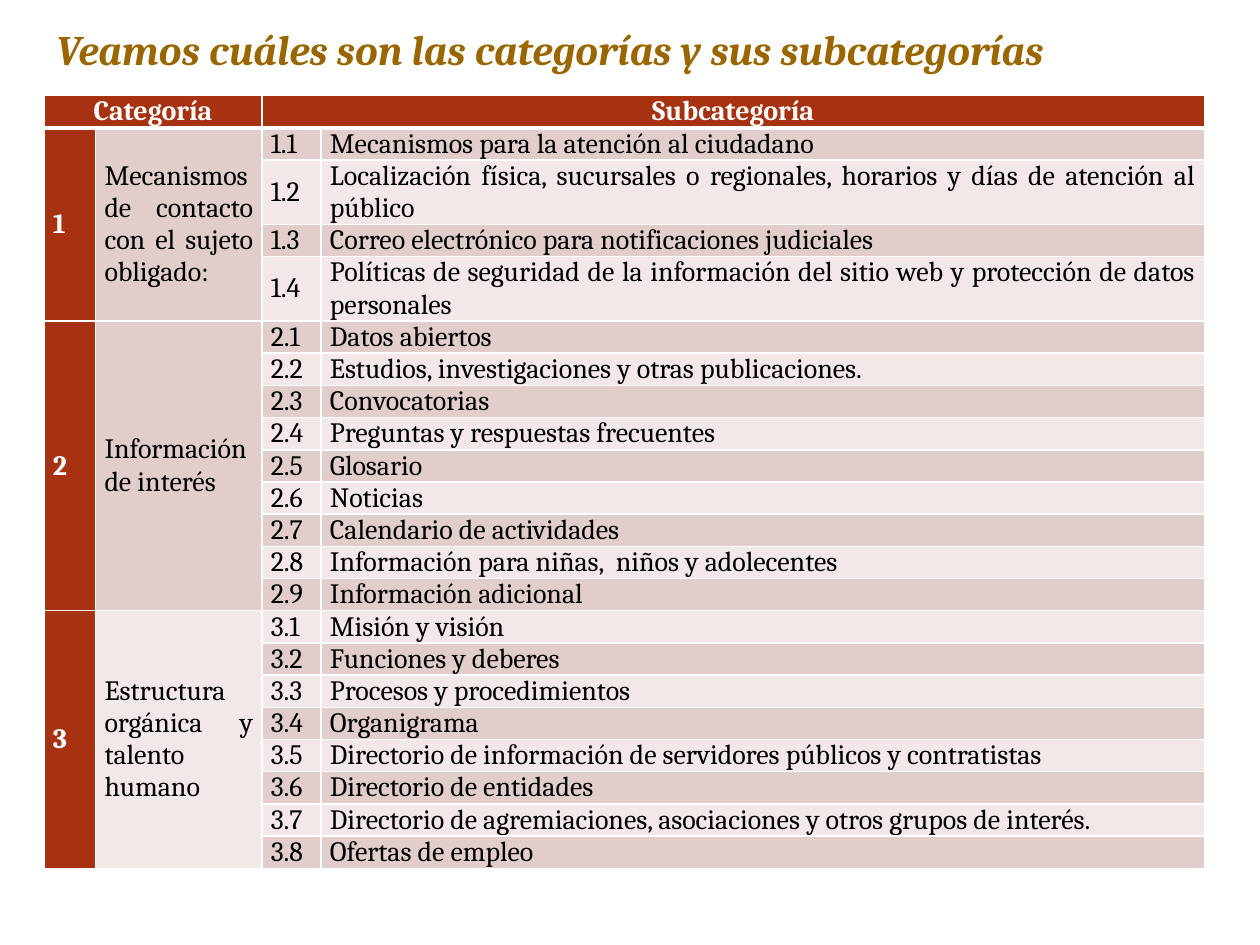
from lxml import etree
from pptx import Presentation
from pptx.dml.color import RGBColor
from pptx.enum.text import MSO_ANCHOR, PP_ALIGN
from pptx.oxml.ns import qn
from pptx.util import Inches, Pt

MIDDLE = MSO_ANCHOR.MIDDLE
CENTER = PP_ALIGN.CENTER
JUSTIFY = PP_ALIGN.JUSTIFY

COLORS = {
    "title": "996600",
    "accent": "A63212",
    "dark_band": "E1CECC",
    "light_band": "F1E8E7",
    "border": "FFFFFF",
    "header_text": "FFFFFF",
    "body_text": "000000",
}
FONT = "Cambria"
TITLE_STYLE = {"name": FONT, "size": Pt(24), "bold": True, "italic": True}
HEADER_STYLE = {"name": FONT, "size": Pt(16), "bold": True}
BODY_STYLE = {"name": FONT, "size": Pt(16), "bold": False}
CELL_FORMAT = {
    "vertical_anchor": MIDDLE,
    "margin_left": Inches(0.07),
    "margin_right": Inches(0.07),
    "margin_top": 0,
    "margin_bottom": 0,
}

SLIDE_WIDTH, SLIDE_HEIGHT = 10, 7.5
LEFT = 0.35
TITLE_BOX = (LEFT, 0.01, 9.06, 0.76)
TABLE_BOX = (LEFT, 0.76, 9.21, 6.02)
COLUMN_WIDTHS = (0.41, 1.32, 0.47, 7.01)
ROW_HEIGHT, TALL_ROW_HEIGHT = 0.25, 0.51
LINE_CAPACITY = 70

HEADERS = ("Categoría", "Subcategoría")
CATEGORIES = (
    ("Mecanismos de contacto con el sujeto obligado:", (
        "Mecanismos para la atención al ciudadano",
        "Localización física, sucursales o regionales, horarios y días de atención al público",
        "Correo electrónico para notificaciones judiciales",
        "Políticas de seguridad de la información del sitio web y protección de datos personales",
    )),
    ("Información de interés", (
        "Datos abiertos",
        "Estudios, investigaciones y otras publicaciones.",
        "Convocatorias",
        "Preguntas y respuestas frecuentes",
        "Glosario",
        "Noticias",
        "Calendario de actividades",
        "Información para niñas,  niños y adolecentes",
        "Información adicional",
    )),
    ("Estructura orgánica y talento humano", (
        "Misión y visión",
        "Funciones y deberes",
        "Procesos y procedimientos",
        "Organigrama",
        "Directorio de información de servidores públicos y contratistas",
        "Directorio de entidades",
        "Directorio de agremiaciones, asociaciones y otros grupos de interés.",
        "Ofertas de empleo",
    )),
)


def set_attributes(target, values):
    for name, value in values.items():
        setattr(target, name, value)


def write_text(frame, text, style, color, alignment):
    para = frame.paragraphs[0]
    para.alignment = alignment
    span = para.add_run()
    span.text = text
    set_attributes(span.font, style)
    span.font.color.rgb = RGBColor.from_string(COLORS[color])


def set_borders(cell, bottom_width):
    properties = cell._tc.get_or_add_tcPr()
    widths = {"a:lnL": 1, "a:lnR": 1, "a:lnT": 1, "a:lnB": bottom_width}
    for position, (tag, width) in enumerate(widths.items()):
        line = etree.Element(qn(tag), w=str(Pt(width)))
        fill = etree.SubElement(line, qn("a:solidFill"))
        etree.SubElement(fill, qn("a:srgbClr"), val=COLORS["border"])
        properties.insert(position, line)


def fill_cell(cell, text, fill, style=BODY_STYLE, color="body_text", alignment=JUSTIFY):
    set_attributes(cell, CELL_FORMAT)
    cell.fill.solid()
    cell.fill.fore_color.rgb = RGBColor.from_string(COLORS[fill])
    write_text(cell.text_frame, text, style, color, alignment)


def add_title(page, box):
    frame = page.shapes.add_textbox(*map(Inches, box)).text_frame
    frame.word_wrap = True
    frame.vertical_anchor = MIDDLE
    write_text(frame, "Veamos cuáles son las categorías y sus subcategorías",
               TITLE_STYLE, "title", JUSTIFY)


def add_category(table, first_row, number, category, subcategories):
    last_row = first_row + len(subcategories) - 1
    for column in (0, 1):
        table.cell(first_row, column).merge(table.cell(last_row, column))
    for index, subcategory in enumerate(subcategories):
        row = first_row + index
        band = "dark_band" if row % 2 else "light_band"
        if index == 0:
            fill_cell(table.cell(row, 0), str(number), "accent", HEADER_STYLE, "header_text")
            fill_cell(table.cell(row, 1), category, band)
        fill_cell(table.cell(row, 2), f"{number}.{index + 1}", band)
        fill_cell(table.cell(row, 3), subcategory, band)
        if len(subcategory) > LINE_CAPACITY:
            table.rows[row].height = Inches(TALL_ROW_HEIGHT)
    return last_row + 1


def add_category_table(page, box):
    row_count = 1 + sum(len(subcategories) for _, subcategories in CATEGORIES)
    table = page.shapes.add_table(
        row_count, len(COLUMN_WIDTHS), *map(Inches, box)).table
    for column, width in zip(table.columns, COLUMN_WIDTHS):
        column.width = Inches(width)
    for row in table.rows:
        row.height = Inches(ROW_HEIGHT)

    for index, header in enumerate(HEADERS):
        cell = table.cell(0, 2 * index)
        cell.merge(table.cell(0, 2 * index + 1))
        fill_cell(cell, header, "accent", HEADER_STYLE, "header_text", CENTER)

    next_row = 1
    for number, (category, subcategories) in enumerate(CATEGORIES, 1):
        next_row = add_category(table, next_row, number, category, subcategories)

    for index, row in enumerate(table.rows):
        for cell in row.cells:
            set_borders(cell, 1 if index else 3)


def main():
    deck = Presentation()
    deck.slide_width = Inches(SLIDE_WIDTH)
    deck.slide_height = Inches(SLIDE_HEIGHT)
    page = deck.slides.add_slide(deck.slide_layouts[6])
    add_category_table(page, TABLE_BOX)
    add_title(page, TITLE_BOX)
    deck.save("out.pptx")


if __name__ == "__main__":
    main()
